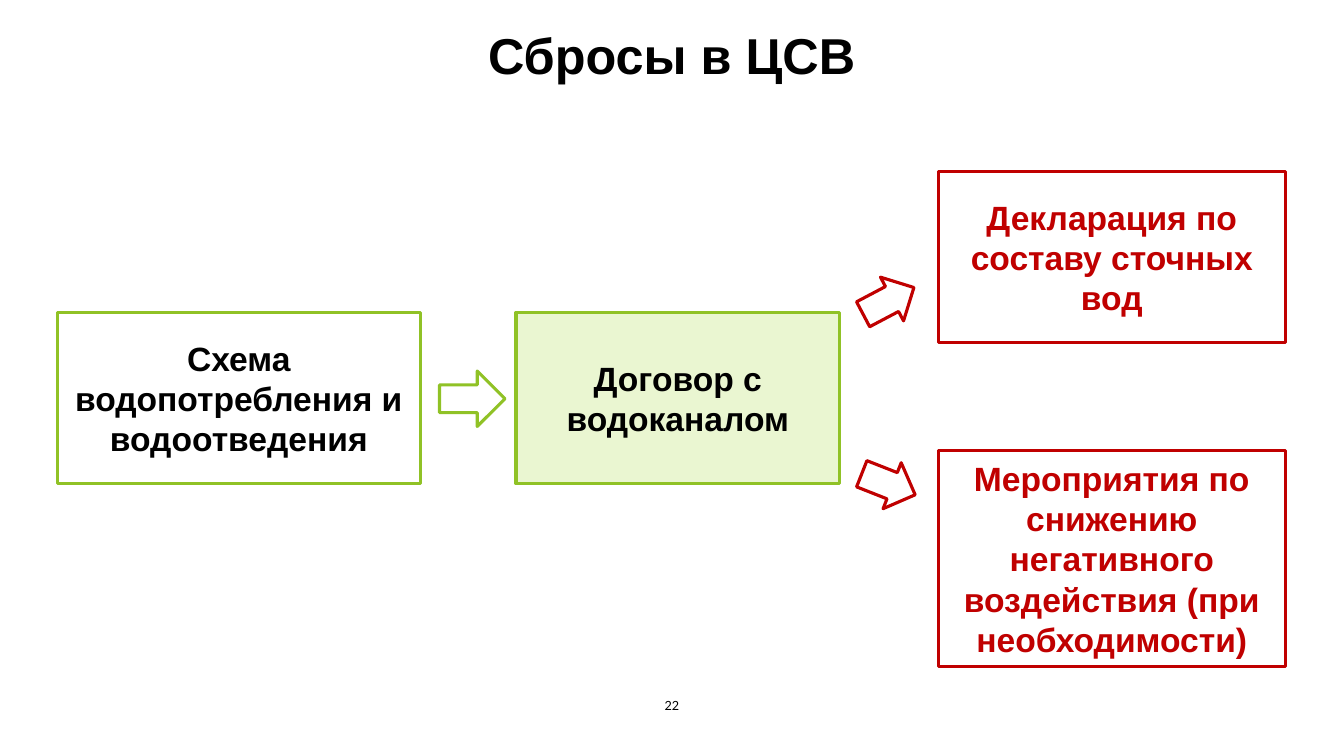
from pptx import Presentation
from pptx import util as u
from pptx.dml import color
from pptx.enum import shapes, text

GREEN, PALE, RED = "90C226", "EAF6D1", "C00000"
BLACK, WHITE = "000000", "FFFFFF"


def rgb(value):
    """Turn a hex string into a colour."""
    return color.RGBColor.from_string(value)


class Deck:
    """Hold the style and the current slide."""

    font = "Arial"
    line_width = 2.25

    def __init__(self, prs):
        """Add a slide with a title only."""
        self.s = prs.slides.add_slide(prs.slide_layouts[5])

    def label(self, sp, words, size, hue, bold=True, font=None,
              anchor=text.MSO_ANCHOR.MIDDLE):
        """Set centred text in a shape and format it."""
        tf = sp.text_frame
        tf.text = words
        tf.word_wrap = True
        tf.auto_size = text.MSO_AUTO_SIZE.NONE
        tf.vertical_anchor = anchor
        p = tf.paragraphs[0]
        p.alignment = text.PP_ALIGN.CENTER
        r = p.runs[0]
        r.font.name = font or self.font
        r.font.size = u.Pt(size)
        r.font.bold = bold
        r.font.color.rgb = rgb(hue)

    def title(self, words, x, y, w, h):
        """Move and fill the title placeholder."""
        sp = self.s.shapes.title
        sp.left, sp.top, sp.width, sp.height = map(u.Pt, (x, y, w, h))
        self.label(sp, words, 36, BLACK, anchor=text.MSO_ANCHOR.TOP)

    def outline(self, kind, x, y, w, h, line, fill=None):
        """Add an outlined preset shape."""
        sp = self.s.shapes.add_shape(kind, *map(u.Pt, (x, y, w, h)))
        sp.shadow.inherit = False
        sp.line.color.rgb = rgb(line)
        sp.line.width = u.Pt(self.line_width)
        if fill:
            sp.fill.solid()
            sp.fill.fore_color.rgb = rgb(fill)
        else:
            sp.fill.background()
        return sp

    def box(self, words, x, y, w, h, line, hue, fill=None):
        """Add a rectangle with bold text."""
        sp = self.outline(shapes.MSO_SHAPE.RECTANGLE, x, y, w, h, line, fill)
        self.label(sp, words, 24, hue)

    def arrow(self, x, y, w, h, turn, line, shaft=0.5, fill=None):
        """Add a turned block arrow."""
        sp = self.outline(shapes.MSO_SHAPE.DOWN_ARROW, x, y, w, h, line, fill)
        sp.adjustments[0] = shaft
        sp.rotation = turn

    def number(self, words, x, y, w, h):
        """Add the slide number."""
        sp = self.s.shapes.add_textbox(*map(u.Pt, (x, y, w, h)))
        self.label(sp, words, 9, BLACK, bold=False, font="Lato")


def main():
    """Build the slide and save it."""
    prs = Presentation()
    prs.slide_width, prs.slide_height = u.Pt(960), u.Pt(540)
    deck = Deck(prs)
    deck.title("Сбросы в ЦСВ", 316, 13.7, 327.6, 51)

    for words, x, w, fill in (
        ("Схема водопотребления и водоотведения", 41, 259.2, WHITE),
        ("Договор с водоканалом", 368.6, 231.1, PALE),
    ):
        deck.box(words, x, 223.2, w, 122.4, GREEN, BLACK, fill)
    deck.arrow(317.5, 261.4, 39.6, 46.8, 270, GREEN, fill=WHITE)

    for words, y, h, arrow_y, turn in (
        ("Декларация по составу сточных вод", 122.4, 122.4, 194.4, 242.2),
        ("Мероприятия по снижению негативного воздействия "
         "(при необходимости)", 321.8, 154.1, 325.4, 291.5),
    ):
        deck.box(words, 670.3, y, 247.7, h, RED, RED)
        deck.arrow(617, arrow_y, 35.3, 41, turn, RED, shaft=0.57)

    deck.number("22", 452.9, 489.6, 54, 28.8)
    prs.save("out.pptx")


if __name__ == "__main__":
    main()
